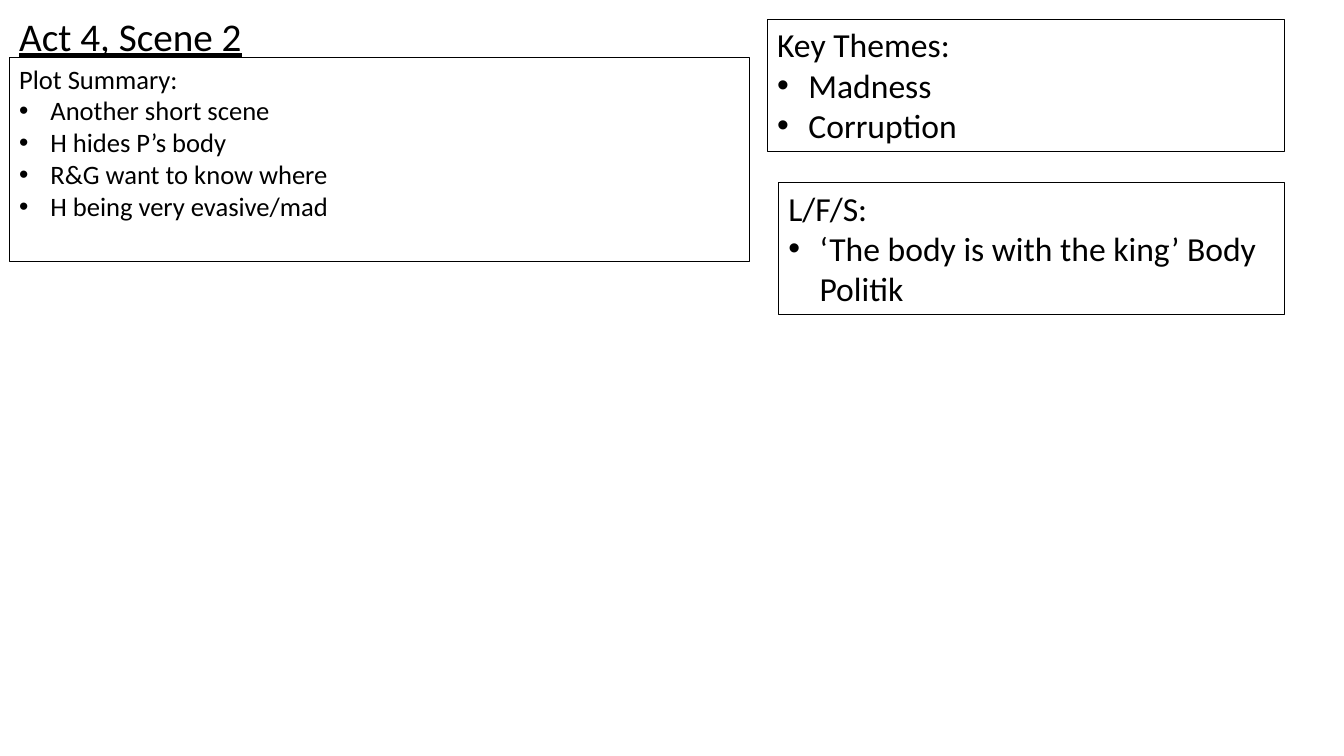
"""Build the Act 4, Scene 2 revision slide."""
import pptx
import pptx.dml.color
import pptx.enum.text
import pptx.oxml
import pptx.oxml.ns
import pptx.util
from pptx.util import Inches, Pt

FONT = "Calibri"
COLOURS = {"ink": "000000"}
INDENT = 0.31

TITLE = ("Act 4, Scene 2", (0.09, 0.07, 2.44, 0.57), 28)
PLOT = (
    "Plot Summary:",
    ["Another short scene", "H hides P’s body", "R&G want to know where", "H being very evasive/mad"],
    (0.09, 0.57, 7.34, 2.02),
    19,
)
SIDE_BOXES = [
    ("Key Themes:", ["Madness", "Corruption"], (7.61, 0.19, 5.13, 1.31), 24),
    ("L/F/S:", ["‘The body is with the king’ Body Politik"], (7.72, 1.81, 5.02, 1.31), 24),
]


def ink():
    return pptx.dml.color.RGBColor.from_string(COLOURS["ink"])


def place(sp, at):
    sp.left, sp.top, sp.width, sp.height = map(Inches, at)
    tf = sp.text_frame
    tf.word_wrap = True
    tf.auto_size = pptx.enum.text.MSO_AUTO_SIZE.NONE
    tf.vertical_anchor = pptx.enum.text.MSO_ANCHOR.TOP
    return tf


def style(p, size):
    p.alignment = pptx.enum.text.PP_ALIGN.LEFT
    p.space_before = Pt(0)
    p.font.name = FONT
    p.font.size = Pt(size)
    p.font.bold = False
    p.font.color.rgb = ink()


def set_bullet(p, bulleted):
    pPr = p._p.get_or_add_pPr()
    indent = Inches(INDENT) if bulleted else 0
    pPr.set("marL", str(indent))
    pPr.set("indent", str(-indent))
    tags = ['a:buFont {} typeface="Arial"', 'a:buChar {} char="•"'] if bulleted else ["a:buNone {}"]
    for tag in tags:
        xml = "<" + tag.format(pptx.oxml.ns.nsdecls("a")) + "/>"
        pPr.insert_element_before(pptx.oxml.parse_xml(xml), "a:tabLst", "a:defRPr", "a:extLst")


def fill_box(sp, heading, points, at, size):
    tf = place(sp, at)
    sp.line.color.rgb = ink()
    sp.line.width = Pt(0.75)
    tf.text = "\n".join([heading] + points)
    for i, p in enumerate(tf.paragraphs):
        style(p, size)
        set_bullet(p, i > 0)


def main():
    prs = pptx.Presentation()
    prs.slide_width, prs.slide_height = Inches(13.33), Inches(7.5)
    s = prs.slides.add_slide(prs.slide_layouts[1])

    text, at, size = TITLE
    tf = place(s.shapes.title, at)
    tf.word_wrap = False
    tf.text = text
    style(tf.paragraphs[0], size)
    tf.paragraphs[0].font.underline = True

    fill_box(s.placeholders[1], *PLOT)
    for box in SIDE_BOXES:
        fill_box(s.shapes.add_textbox(0, 0, 0, 0), *box)

    prs.save("out.pptx")


if __name__ == "__main__":
    main()
